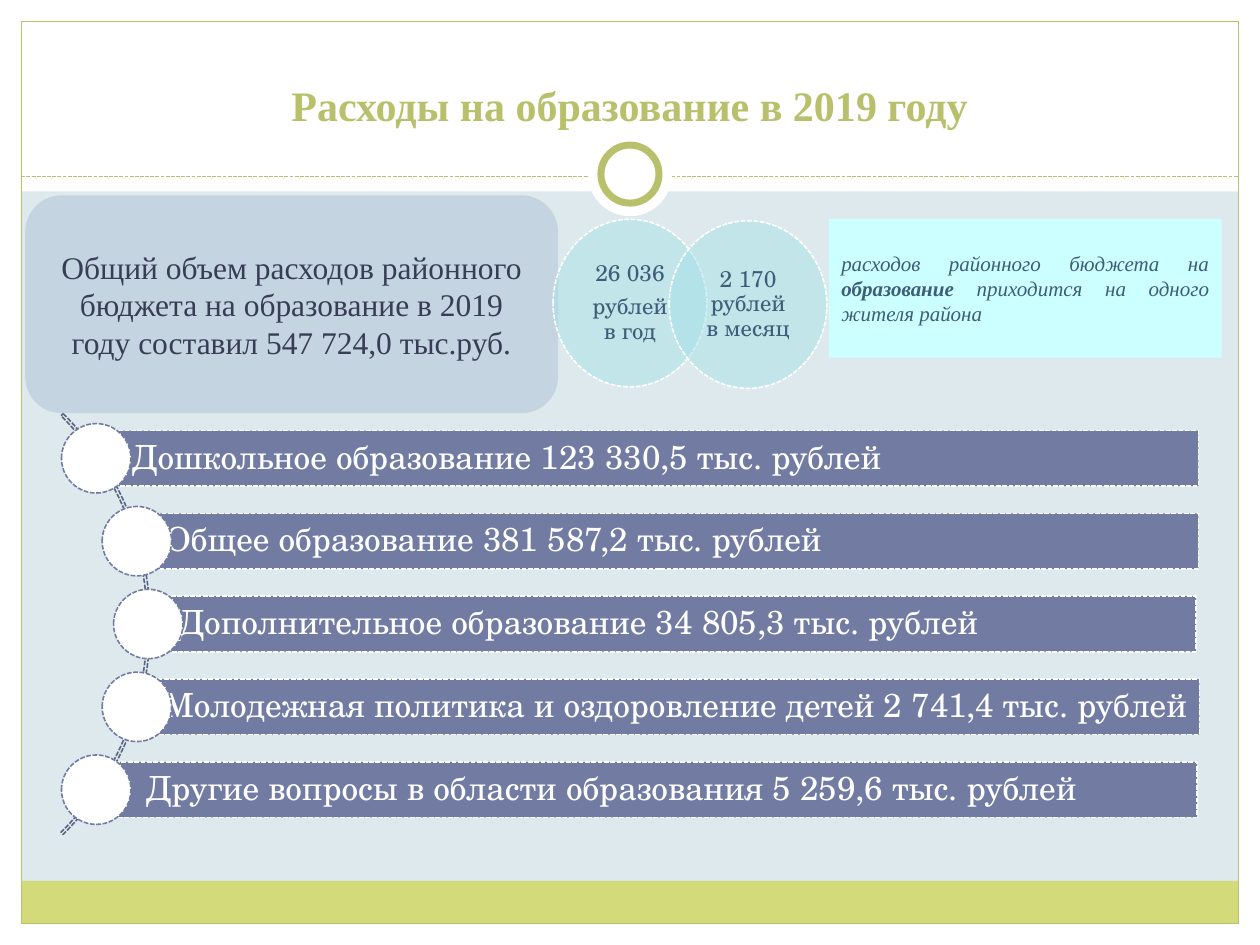
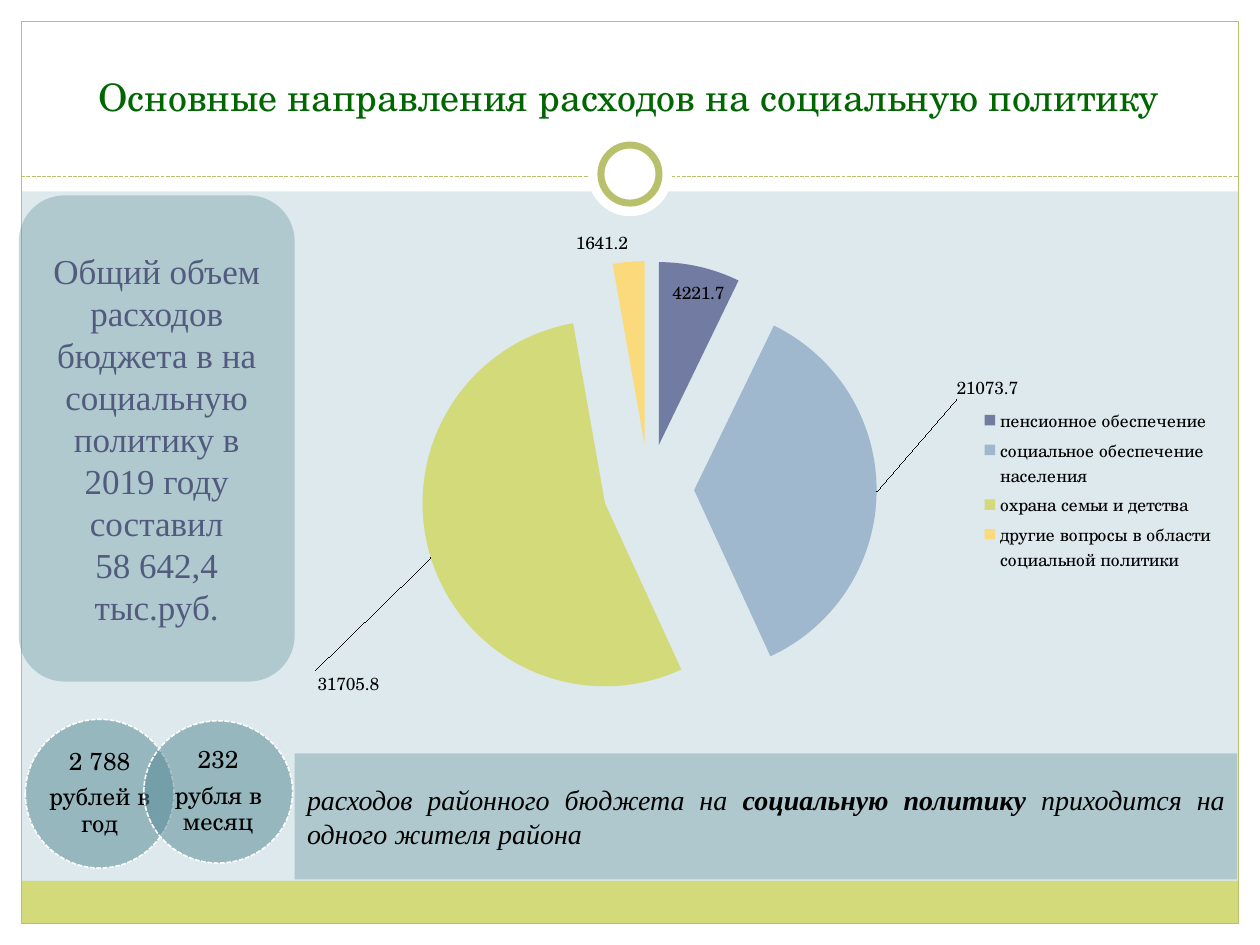
from lxml.etree import SubElement
from pptx import Presentation
from pptx.chart.data import CategoryChartData
from pptx.dml.color import RGBColor
from pptx.enum.chart import XL_CHART_TYPE as ChartType
from pptx.enum.chart import XL_LABEL_POSITION as LabelPosition
from pptx.enum.chart import XL_LEGEND_POSITION as LegendPosition
from pptx.enum.dml import MSO_LINE as Dash
from pptx.enum.shapes import MSO_CONNECTOR as Connector
from pptx.enum.shapes import MSO_SHAPE as Shape
from pptx.enum.shapes import PP_PLACEHOLDER as Placeholder
from pptx.enum.text import MSO_ANCHOR as Anchor
from pptx.enum.text import MSO_AUTO_SIZE as AutoSize
from pptx.enum.text import PP_ALIGN as Align
from pptx.oxml.ns import qn
from pptx.util import Cm, Pt

WHITE = RGBColor(0xFF, 0xFF, 0xFF)
BLACK = RGBColor(0, 0, 0)
PALE_BLUE = RGBColor(0xDD, 0xE9, 0xEC)
OLIVE = RGBColor(0xB9, 0xC0, 0x6C)
LIME = RGBColor(0xD2, 0xDA, 0x7A)
GREEN = RGBColor(0x00, 0x66, 0x00)
INDIGO = RGBColor(0x72, 0x7C, 0xA3)
ARC_GREY = RGBColor(0x5B, 0x63, 0x83)
STEEL = RGBColor(0x9F, 0xB8, 0xCD)
YELLOW = RGBColor(0xFA, 0xDA, 0x7A)
SKY = RGBColor(0xC5, 0xD4, 0xE1)
AQUA = RGBColor(0xA6, 0xE2, 0xE8)
CYAN = RGBColor(0xCC, 0xFF, 0xFF)
TEAL = RGBColor(0x52, 0x86, 0x93)
NAVY = RGBColor(0x37, 0x3D, 0x54)
SLATE = RGBColor(0x3E, 0x5D, 0x78)
VIOLET = RGBColor(0x52, 0x5B, 0x7E)
SERIF = "Times New Roman"
SCHOOL = "TeX Gyre Schola"

SLIDE_W, SLIDE_H = 25.4, 19.05
MARGIN = 0.43

# Boxes are (left, top, width, height) in centimetres.
# In a paragraph given as a tuple, every second part is bold.
EDUCATION = {
    "title": "Расходы на образование в 2019 году",
    "total": ["Общий объем расходов районного бюджета на образование "
              "в 2019 году составил 547 724,0 тыс.руб."],
    "per_person": [
        (["26 036", "рублей в год"], (11.15, 4.42, 3.1, 3.38)),
        (["2 170 рублей в месяц"], (13.49, 4.45, 3.18, 3.38)),
    ],
    "note": [("расходов районного бюджета на ", "образование",
              " приходится на одного жителя района")],
    # text, circle left, bar left, bar right, text inset
    "spending": [
        ("Дошкольное образование 123 330,5 тыс. рублей", 1.24, 1.6, 24.16, 1.07),
        ("Общее образование 381 587,2 тыс. рублей", 2.06, 2.44, 24.16, 0.89),
        ("Дополнительное образование 34 805,3 тыс. рублей", 2.29, 2.72, 24.11, 0.89),
        ("Молодежная политика и оздоровление детей 2 741,4 тыс. рублей",
         2.06, 2.39, 24.18, 0.89),
        ("Другие вопросы в области образования 5 259,6 тыс. рублей",
         1.24, 2.06, 24.13, 0.89),
    ],
}
SOCIAL = {
    "title": "Основные направления расходов на социальную политику",
    "total": ["Общий объем расходов бюджета в на социальную политику "
              "в 2019 году составил", "58 642,4 тыс.руб."],
    "per_person": [
        (["2 788", "рублей в год"], (0.51, 14.5, 3, 3)),
        (["232", "рубля в месяц"], (2.9, 14.53, 3, 2.87)),
    ],
    "note": [("расходов районного бюджета на ", "социальную политику",
              " приходится на одного жителя района")],
    "spending": [
        ("пенсионное обеспечение", 4221.7, INDIGO),
        ("социальное обеспечение населения", 21073.7, STEEL),
        ("охрана семьи и детства", 31705.8, LIME),
        ("другие вопросы в области социальной политики", 1641.2, YELLOW),
    ],
    # point index: label shift as a share of the chart
    "label_shifts": {1: (0.08, -0.2), 2: (-0.12, 0.21)},
}


def cm_box(box):
    return [Cm(length) for length in box]


def set_line(line, color, width, dash=None):
    line.color.rgb = color
    line.width = Pt(width)
    if dash:
        line.dash_style = dash


def add_figure(slide, kind, box, fill=None, opacity=100, line=None):
    """Add a flat preset shape; line is (colour, points[, dash])."""
    figure = slide.shapes.add_shape(kind, *cm_box(box))
    figure.shadow.inherit = False
    if fill is None:
        figure.fill.background()
    else:
        figure.fill.solid()
        figure.fill.fore_color.rgb = fill
        if opacity < 100:
            color = figure.element.spPr.find(".//" + qn("a:srgbClr"))
            SubElement(color, qn("a:alpha")).set("val", str(opacity * 1000))
    if line:
        set_line(figure.line, *line)
    else:
        figure.line.fill.background()
    return figure


def write(figure, paragraphs, size, color, font=SERIF, align=Align.CENTER,
          anchor=Anchor.MIDDLE, bold=None, italic=None, spacing=None, after=None):
    frame = figure.text_frame
    frame.word_wrap = True
    frame.auto_size = AutoSize.NONE
    frame.vertical_anchor = anchor
    for index, parts in enumerate(paragraphs):
        paragraph = frame.add_paragraph() if index else frame.paragraphs[0]
        paragraph.alignment = align
        if spacing:
            paragraph.line_spacing = spacing
        if after:
            paragraph.space_after = Pt(after)
        style = paragraph.font
        style.name, style.size, style.color.rgb = font, Pt(size), color
        style.bold, style.italic = bold, italic
        if isinstance(parts, str):
            parts = (parts,)
        for position, part in enumerate(parts):
            run = paragraph.add_run()
            run.text = part
            if position % 2:
                run.font.bold = True
    return frame


def set_insets(frame, side, vertical):
    frame.margin_left = frame.margin_right = Cm(side)
    frame.margin_top = frame.margin_bottom = Cm(vertical)


def set_title(slide, text, height, size, color, font, bold=False):
    title = slide.shapes.title
    title.left, title.top, title.width, title.height = cm_box((0.84, 0.64, 23.7, height))
    write(title, [text], size, color, font, anchor=Anchor.BOTTOM, bold=bold)


def add_per_person(slide, circles, fill, size, color, inset):
    for paragraphs, box in circles:
        add_figure(slide, Shape.OVAL, box, fill, 50, (WHITE, 0.9, Dash.SQUARE_DOT))
        caption = slide.shapes.add_textbox(*cm_box(box))
        frame = write(caption, paragraphs, size, color, SCHOOL, spacing=0.9, after=5)
        set_insets(frame, inset, 0.05)


def add_frame(slide):
    right = SLIDE_W - MARGIN
    inner_w = SLIDE_W - 2 * MARGIN
    bottom = SLIDE_H - MARGIN
    for box in [(0, bottom, SLIDE_W, MARGIN), (0, 0, SLIDE_W, 3.86),
                (0, 0, MARGIN, SLIDE_H), (right, 0, MARGIN, SLIDE_H)]:
        add_figure(slide, Shape.RECTANGLE, box, WHITE)
    add_figure(slide, Shape.RECTANGLE, (MARGIN, 17.76, inner_w, 0.86), LIME)
    add_figure(slide, Shape.RECTANGLE, (MARGIN, MARGIN, inner_w, bottom - MARGIN),
               line=(OLIVE, 0.75))
    divider = slide.shapes.add_connector(
        Connector.STRAIGHT, *cm_box((MARGIN, 3.56, right, 3.56)))
    set_line(divider.line, OLIVE, 0.75, Dash.SQUARE_DOT)
    SubElement(divider.element.spPr, qn("a:effectLst"))
    for diameter, line in [(1.7, None), (1.17, (OLIVE, 4))]:
        ring_box = ((SLIDE_W - diameter) / 2, 3.51 - diameter / 2, diameter, diameter)
        add_figure(slide, Shape.OVAL, ring_box, WHITE, line=line)


def share_frame(slide, layout):
    """Draw the frame and hand it to the layout, so that all slides show it."""
    for holder in list(layout.placeholders):
        if holder.placeholder_format.type != Placeholder.TITLE:
            holder.element.getparent().remove(holder.element)
    layout.background.fill.solid()
    layout.background.fill.fore_color.rgb = PALE_BLUE
    add_frame(slide)
    for part in list(slide.shapes):
        if not part.is_placeholder:
            layout.shapes.element.append(part.element)


def add_spending_list(slide, rows):
    row_step, first_circle, circle = 1.67, 8.54, 1.4
    arc = add_figure(slide, Shape.BLOCK_ARC, (-8.97, 6.58, 12, 12),
                     line=(ARC_GREY, 0.9, Dash.SQUARE_DOT))
    for index, value in enumerate((189, 27, 0.005)):
        arc.adjustments[index] = value
    for index, (text, circle_left, left, right, inset) in enumerate(rows):
        top = first_circle + index * row_step
        bar = add_figure(slide, Shape.RECTANGLE, (left, top + 0.14, right - left, 1.12),
                         INDIGO, line=(WHITE, 0.9, Dash.SQUARE_DOT))
        frame = write(bar, [text], 19, WHITE, SCHOOL, Align.LEFT, spacing=0.9)
        set_insets(frame, 0.13, 0.13)
        frame.margin_left = Cm(inset)
        add_figure(slide, Shape.OVAL, (circle_left, top, circle, circle), WHITE,
                   line=(INDIGO, 0.9, Dash.SQUARE_DOT))


def set_layout(parent, index, edges=False, inner=False, **shares):
    """Place a chart part by hand; shares are x, y, w and h of the chart."""
    for old in parent.findall(qn("c:layout")):
        parent.remove(old)
    layout = SubElement(parent, qn("c:layout"))
    manual = SubElement(layout, qn("c:manualLayout"))
    if inner:
        SubElement(manual, qn("c:layoutTarget")).set("val", "inner")
    if edges:
        for mode in ("xMode", "yMode"):
            SubElement(manual, qn("c:" + mode)).set("val", "edge")
    for key, share in shares.items():
        SubElement(manual, qn("c:" + key)).set("val", str(share))
    parent.insert(index, layout)


def add_spending_pie(slide, rows, label_shifts):
    names, values, colors = zip(*rows)
    spending = CategoryChartData()
    spending.categories = names
    spending.add_series("Series 1", values)
    chart = slide.shapes.add_chart(
        ChartType.PIE_EXPLODED, *cm_box((6.35, 4.52, 18.34, 10.6)), spending).chart
    chart.has_title = False
    chart.font.name, chart.font.size = SCHOOL, Pt(10)
    chart.font.color.rgb = BLACK
    chart.has_legend = True
    chart.legend.position = LegendPosition.RIGHT
    chart.legend.include_in_layout = False
    set_layout(chart.legend._element, 1, edges=True, x=0.73, y=0.34, w=0.26, h=0.33)
    plot_area = chart.element.find(".//" + qn("c:plotArea"))
    set_layout(plot_area, 0, edges=True, inner=True, x=0.11, y=0.07, w=0.51, h=0.87)

    pie = chart.plots[0]
    pie.vary_by_categories = True
    slices = pie.series[0]
    slices.data_labels.show_value = True
    slices.data_labels.position = LabelPosition.BEST_FIT
    for index, color in enumerate(colors):
        fill = slices.points[index].format.fill
        fill.solid()
        fill.fore_color.rgb = color
    for index, (x, y) in label_shifts.items():
        slices.points[index].data_label.position = LabelPosition.BEST_FIT
    for label in chart.element.iter(qn("c:dLbl")):
        x, y = label_shifts[int(label.find(qn("c:idx")).get("val"))]
        set_layout(label, 1, x=x, y=y)


def build_education(slide):
    set_title(slide, EDUCATION["title"], 2.11, 24, OLIVE, SERIF, bold=True)
    add_spending_list(slide, EDUCATION["spending"])
    total = add_figure(slide, Shape.ROUNDED_RECTANGLE, (0.51, 3.94, 10.74, 4.39), SKY)
    write(total, EDUCATION["total"], 18, NAVY)
    add_per_person(slide, EDUCATION["per_person"], AQUA, 13, SLATE, 0.74)
    note = add_figure(slide, Shape.RECTANGLE, (16.71, 4.42, 7.92, 2.79), CYAN)
    write(note, EDUCATION["note"], 12, SLATE, align=Align.JUSTIFY, italic=True)


def build_social(slide):
    set_title(slide, SOCIAL["title"], 1.88, 21.6, GREEN, SCHOOL)
    add_per_person(slide, SOCIAL["per_person"], TEAL, 14, BLACK, 0.15)
    note = add_figure(slide, Shape.RECTANGLE, (5.94, 15.19, 19, 2.54), TEAL, 33)
    write(note, SOCIAL["note"], 16, BLACK, align=Align.JUSTIFY, italic=True)
    total = add_figure(slide, Shape.ROUNDED_RECTANGLE, (0.38, 3.94, 5.56, 9.8), TEAL, 32)
    write(total, SOCIAL["total"], 20, VIOLET)
    add_spending_pie(slide, SOCIAL["spending"], SOCIAL["label_shifts"])


def main():
    deck = Presentation()
    deck.slide_width, deck.slide_height = Cm(SLIDE_W), Cm(SLIDE_H)
    title_only = deck.slide_layouts[5]
    education = deck.slides.add_slide(title_only)
    social = deck.slides.add_slide(title_only)
    share_frame(education, title_only)
    build_education(education)
    build_social(social)
    deck.save("out.pptx")


if __name__ == "__main__":
    main()
